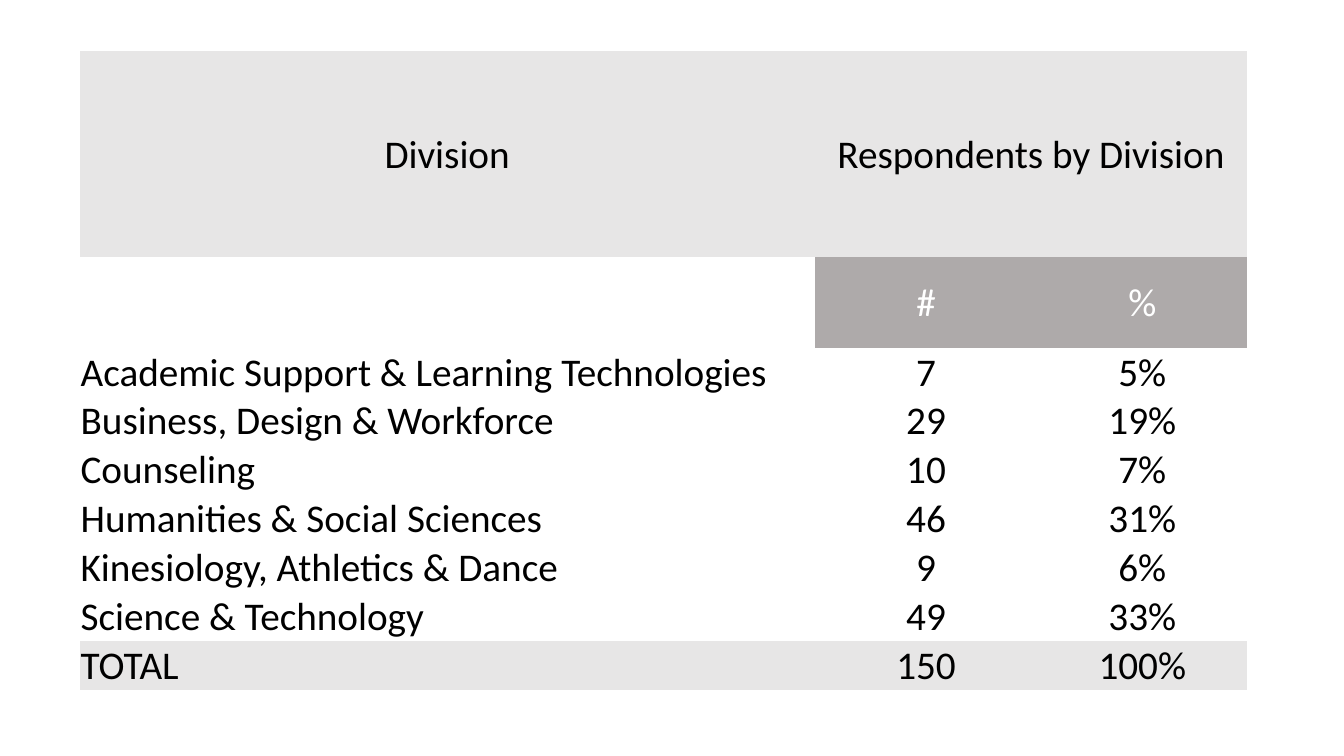
from pptx import Presentation
from pptx.dml.color import RGBColor
from pptx.enum.text import MSO_ANCHOR, PP_ALIGN
from pptx.oxml.ns import qn
from pptx.util import Inches, Pt

COLORS = {"black": "000000", "white": "FFFFFF", "light": "E7E6E6", "gray": "AEAAAA"}
NO_STYLE_NO_GRID = "{2D5ABB26-0587-4C30-8999-92F81FD0307C}"

COL_SHARES = [7.29, 2.21, 2.08]
HEADER_HEIGHT, SUBHEADER_HEIGHT, ROW_HEIGHT = 2.04, 0.9, 0.48

HEADER = ["Division", "Respondents by Division", ""]
SUBHEADER = ["", "#", "%"]
DIVISIONS = [
    ["Academic Support & Learning Technologies", "7", "5%"],
    ["Business, Design & Workforce", "29", "19%"],
    ["Counseling", "10", "7%"],
    ["Humanities & Social Sciences", "46", "31%"],
    ["Kinesiology, Athletics & Dance", "9", "6%"],
    ["Science & Technology", "49", "33%"],
]
TOTAL = ["TOTAL", "150", "100%"]


def fill_cell(cell, text, align, anchor, color="black", fill=None):
    cell.margin_left = cell.margin_right = cell.margin_top = Inches(0.01)
    cell.margin_bottom = 0
    cell.vertical_anchor = anchor
    if fill:
        cell.fill.solid()
        cell.fill.fore_color.rgb = RGBColor.from_string(COLORS[fill])
    else:
        cell.fill.background()
    if text:
        p = cell.text_frame.paragraphs[0]
        p.alignment = align
        r = p.add_run()
        r.text = text
        r.font.name = "Calibri"
        r.font.size = Pt(28)
        r.font.color.rgb = RGBColor.from_string(COLORS[color])


def add_division_table(slide, left, top, width):
    rows = [HEADER, SUBHEADER, *DIVISIONS, TOTAL]
    heights = [HEADER_HEIGHT, SUBHEADER_HEIGHT] + [ROW_HEIGHT] * (len(rows) - 2)
    table = slide.shapes.add_table(
        len(rows), len(COL_SHARES),
        Inches(left), Inches(top), Inches(width), Inches(sum(heights)),
    ).table
    table.first_row = table.horz_banding = False
    table._tbl.tblPr.find(qn("a:tableStyleId")).text = NO_STYLE_NO_GRID

    for column, share in zip(table.columns, COL_SHARES):
        column.width = Inches(width * share / sum(COL_SHARES))
    for row, height in zip(table.rows, heights):
        row.height = Inches(height)

    for i, texts in enumerate(rows):
        heading = i < 2
        anchor = MSO_ANCHOR.MIDDLE if heading else MSO_ANCHOR.BOTTOM
        for j, text in enumerate(texts):
            align = PP_ALIGN.CENTER if heading or j else PP_ALIGN.LEFT
            color, fill = "black", None
            if texts in (HEADER, TOTAL):
                fill = "light"
            elif texts is SUBHEADER and text:
                color, fill = "white", "gray"
            fill_cell(table.cell(i, j), text, align, anchor, color, fill)
    table.cell(0, 1).merge(table.cell(0, 2))


def main():
    prs = Presentation()
    prs.slide_width, prs.slide_height = Inches(13.33), Inches(7.5)
    slide = prs.slides.add_slide(prs.slide_layouts[6])
    add_division_table(slide, 0.79, 0.51, 11.58)
    prs.save("out.pptx")


if __name__ == "__main__":
    main()
